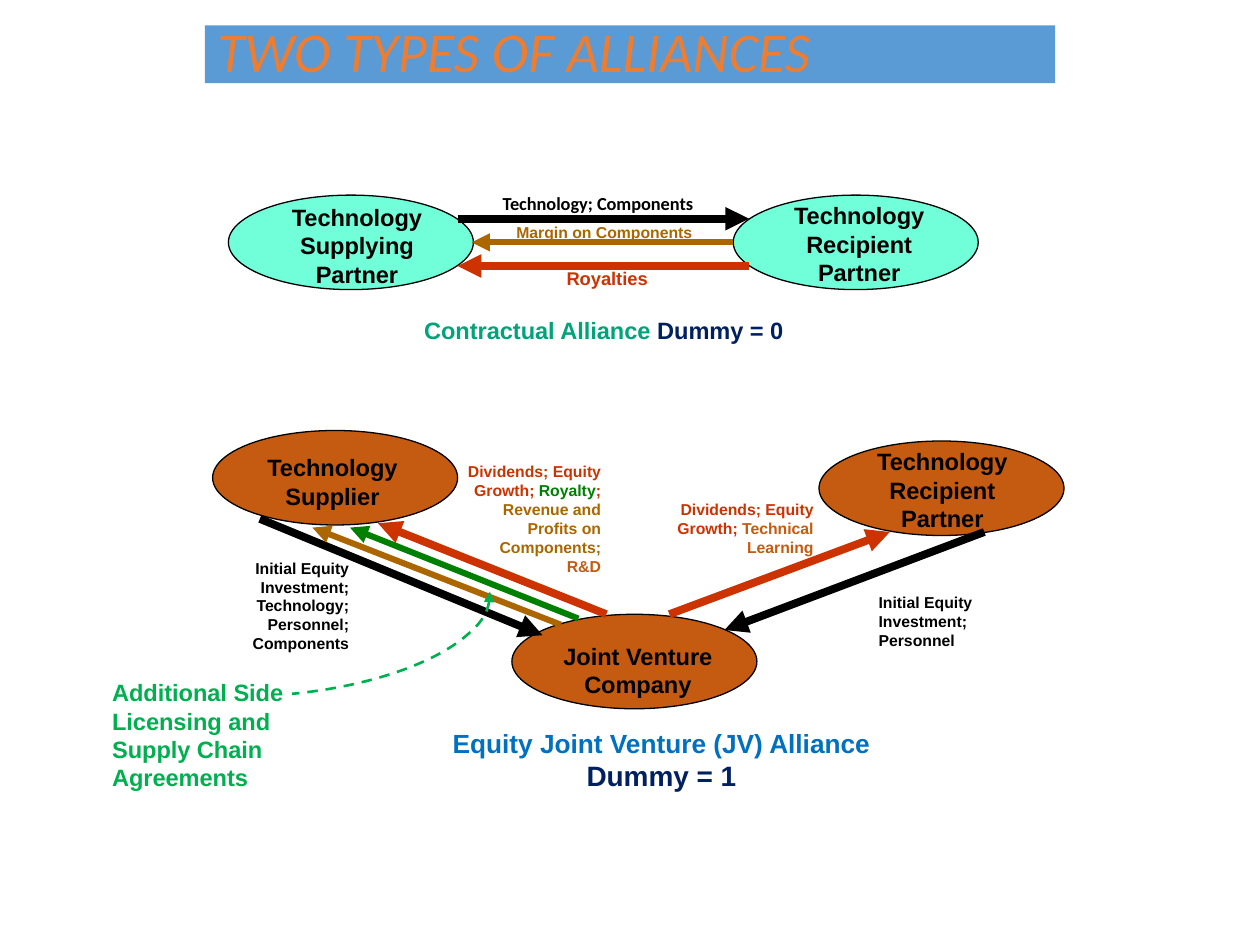
from lxml.etree import SubElement
from pptx import Presentation
from pptx.dml.color import RGBColor
from pptx.enum.dml import MSO_LINE
from pptx.enum.shapes import MSO_CONNECTOR, MSO_SHAPE
from pptx.enum.text import MSO_ANCHOR, MSO_AUTO_SIZE, PP_ALIGN
from pptx.oxml.ns import qn
from pptx.util import Pt

BLACK, RED, GREEN, GOLD = "000000", "CC3300", "008000", "AC6600"
AQUA, RUST, LEAF, NAVY = "71FFDA", "C55A11", "00B050", "002060"
LEFT, CENTER, RIGHT = PP_ALIGN.LEFT, PP_ALIGN.CENTER, PP_ALIGN.RIGHT

TITLE = "TWO TYPES OF ALLIANCES"

# Partners: ellipse corner, fill, label corner, label height, label
OVAL_W, OVAL_H, LABEL_W = 140, 54, 108
PARTNERS = [
    (130.5, 111.5, AQUA, 150, 112.5, 56, "Technology Supplying Partner"),
    (419, 111.5, AQUA, 437, 111.5, 56, "Technology Recipient Partner"),
    (121.5, 246, RUST, 136, 255.5, 40, "Technology Supplier"),
    (468, 252, RUST, 484.5, 252, 56, "Technology Recipient Partner"),
    (292.5, 351, RUST, 310.5, 363, 40, "Joint Venture Company"),
]

# Flows: start, end (arrowhead here), colour, width
FLOWS = [
    (261.5, 125, 428, 125, BLACK, 4.5),
    (428, 152, 261.5, 152, RED, 4.5),
    (419, 138.5, 269.5, 138.5, GOLD, 3.5),
    (148.5, 296.5, 310, 363, BLACK, 4.5),
    (562.5, 304, 414, 360, BLACK, 4.5),
    (346.5, 351, 216, 299, RED, 4.5),
    (382.5, 351, 508.5, 304, RED, 4.5),
    (330.5, 353.5, 200, 301.5, GREEN, 3.5),
    (320.5, 357, 178.5, 301.5, GOLD, 3.5),
]

# Notes: left, top, width, height, alignment, font, runs of (text, size, colour)
NOTES = [
    (269.5, 106.5, 144.5, 20, CENTER, "Calibri",
     [("Technology; Components", 10.5, BLACK)]),
    (288, 124, 125, 18, LEFT, "Arial", [("Margin on Components", 9, GOLD)]),
    (270.5, 149, 153, 20, CENTER, "Arial", [("Royalties", 10.5, RED)]),
    (199, 177, 292, 22, CENTER, "Arial",
     [("Contractual Alliance ", 13.5, "00A479"), ("Dummy = 0", 13.5, NAVY)]),
    (256.5, 260.5, 94, 62, RIGHT, "Arial",
     [("Dividends; Equity Growth; ", 9, RED), ("Royalty", 9, GREEN), ("; ", 9, RED),
      ("Revenue and Profits on Components; ", 9, GOLD), ("R&D", 9, RUST)]),
    (378, 282, 94, 40, RIGHT, "Arial",
     [("Dividends; Equity Growth; ", 9, RED), ("Technical Learning", 9, RUST)]),
    (112.5, 315.5, 94, 62, RIGHT, "Arial",
     [("Initial Equity Investment; Technology; Personnel; Components", 9, BLACK)]),
    (495, 335, 94, 40, LEFT, "Arial",
     [("Initial Equity Investment; Personnel", 9, BLACK)]),
    (57, 384, 152.5, 72, LEFT, "Arial",
     [("Additional Side Licensing and Supply Chain Agreements", 13.5, LEAF)]),
    (232, 412, 292, 43, CENTER, "Arial",
     [("Equity Joint Venture (JV) Alliance ", 15, "0070C0"), ("Dummy = 1", 16, NAVY)]),
]


def rgb(value):
    return RGBColor.from_string(value)


def add_arrowhead(line_shape, end):
    ln = line_shape.line._get_or_add_ln()
    SubElement(ln, qn(f"a:{end}"), type="triangle")


def add_flow(x1, y1, x2, y2, color, width):
    c = s.shapes.add_connector(MSO_CONNECTOR.STRAIGHT, Pt(x1), Pt(y1), Pt(x2), Pt(y2))
    c.line.color.rgb = rgb(color)
    c.line.width = Pt(width)
    add_arrowhead(c, "tailEnd")
    SubElement(c._element.spPr, qn("a:effectLst"))


def add_note(left, top, width, height, align, font, runs):
    tf = s.shapes.add_textbox(Pt(left), Pt(top), Pt(width), Pt(height)).text_frame
    tf.word_wrap = True
    p = tf.paragraphs[0]
    p.alignment = align
    for text, size, color in runs:
        r = p.add_run()
        r.text = text
        r.font.name, r.font.size, r.font.bold = font, Pt(size), True
        r.font.color.rgb = rgb(color)


prs = Presentation()
prs.slide_width, prs.slide_height = Pt(720), Pt(540)
s = prs.slides.add_slide(prs.slide_layouts[5])

# Title bar
title = s.shapes.title
title.left, title.top, title.width, title.height = Pt(117), Pt(14.5), Pt(486), Pt(33)
title.fill.solid()
title.fill.fore_color.rgb = rgb("5B9BD5")
tf = title.text_frame
tf.text = TITLE
tf.auto_size = MSO_AUTO_SIZE.NONE
tf.vertical_anchor = MSO_ANCHOR.MIDDLE
p = tf.paragraphs[0]
p.alignment, p.line_spacing = LEFT, 0.9
font = p.runs[0].font
font.name, font.size, font.italic = "Calibri", Pt(32), True
font.color.rgb = rgb("ED7D31")

# Partner ellipses
for x, y, fill, *_ in PARTNERS:
    sp = s.shapes.add_shape(MSO_SHAPE.OVAL, Pt(x), Pt(y), Pt(OVAL_W), Pt(OVAL_H))
    sp.shadow.inherit = False
    sp.fill.solid()
    sp.fill.fore_color.rgb = rgb(fill)
    sp.line.color.rgb = rgb(BLACK)
    sp.line.width = Pt(0.75)

# Flow arrows
for flow in FLOWS:
    add_flow(*flow)

# Partner labels and notes
for _, _, _, x, y, height, label in PARTNERS:
    add_note(x, y, LABEL_W, height, CENTER, "Arial", [(label, 13.5, BLACK)])
for note in NOTES:
    add_note(*note)

# Dashed arc from the side agreements to the licensing flows
arc = s.shapes.add_shape(MSO_SHAPE.ARC, Pt(106), Pt(223), Pt(100), Pt(248.5))
arc.adjustments[0], arc.adjustments[1] = 162, 211.08
arc.rotation = 85.8
arc.shadow.inherit = False
arc.fill.background()
arc.line.color.rgb = rgb(LEAF)
arc.line.width = Pt(1.5)
arc.line.dash_style = MSO_LINE.DASH
add_arrowhead(arc, "headEnd")

prs.save("out.pptx")
